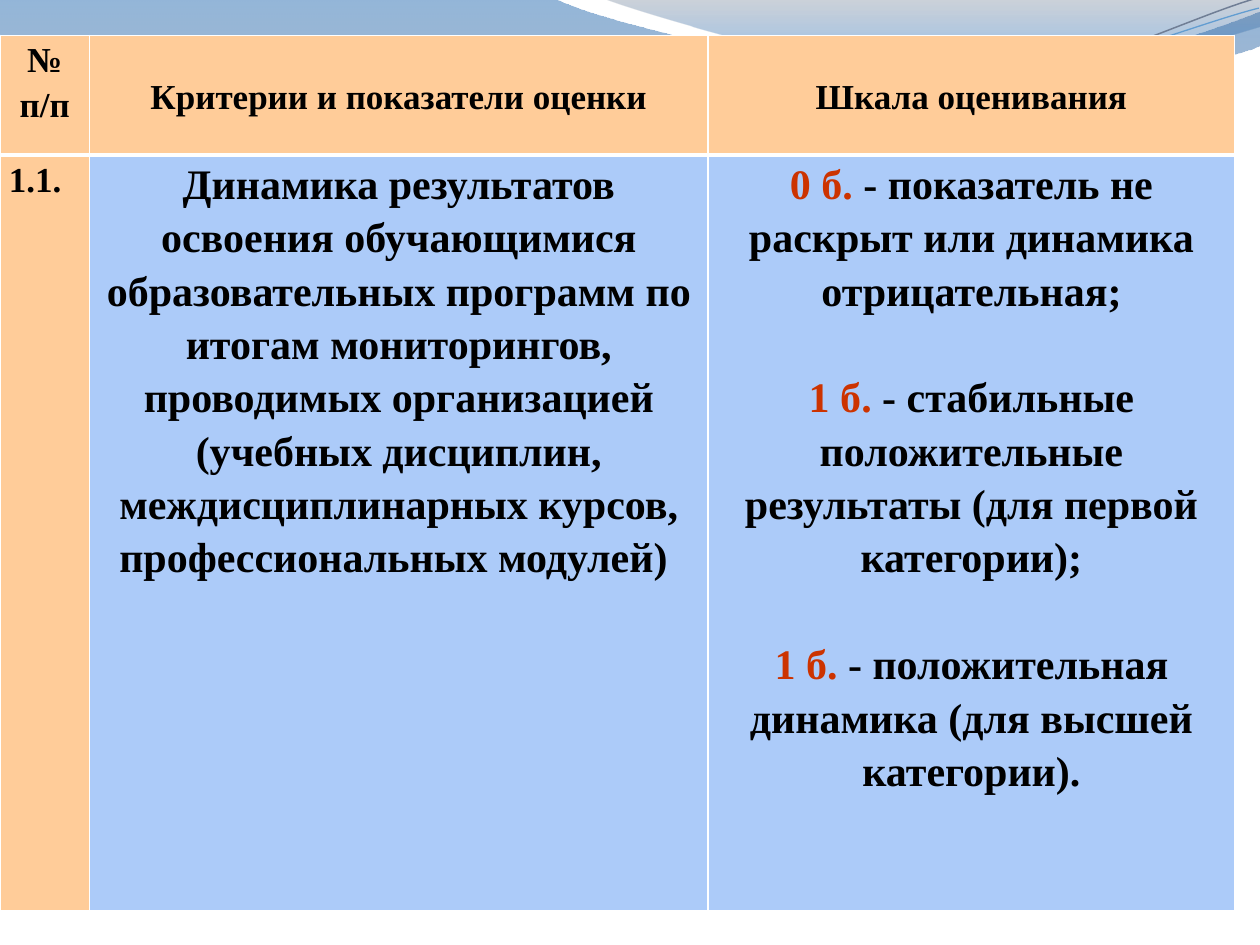
from lxml import etree
from pptx import Presentation
from pptx import util as u
from pptx.dml.color import RGBColor
from pptx.enum import text
from pptx.oxml.ns import qn

BLACK = RGBColor(0x00, 0x00, 0x00)
RED = RGBColor(0xCC, 0x33, 0x00)
WHITE = RGBColor(0xFF, 0xFF, 0xFF)
PEACH = RGBColor(0xFF, 0xCC, 0x99)
SKY = RGBColor(0xAC, 0xCB, 0xF9)
BLUE = RGBColor(0x12, 0x5E, 0xAA)
STEEL = RGBColor(0x69, 0x7F, 0xA4)
SLATE = RGBColor(0x59, 0x69, 0x82)
AZURE = RGBColor(0x06, 0x70, 0xDA)
GREY = RGBColor(0x70, 0x7E, 0x95)
PALE = RGBColor(0x62, 0x9D, 0xD1)

CENTER = text.PP_ALIGN.CENTER
LEFT = text.PP_ALIGN.LEFT

deck = Presentation()
deck.slide_width, deck.slide_height = u.Inches(10), u.Inches(7.5)
slide = deck.slides.add_slide(deck.slide_layouts[6])
slide.background.fill.solid()
slide.background.fill.fore_color.rgb = WHITE


def trace(start, parts, close):
    dots = [start] + [part[i:i + 2] for part in parts for i in range(0, len(part), 2)]
    dots = [(u.Inches(x), u.Inches(y)) for x, y in dots]
    pen = slide.shapes.build_freeform(*dots[0])
    pen.add_line_segments(dots[1:], close=close)
    shape = pen.convert_to_shape()
    shape.shadow.inherit = False
    lines = iter(shape._element.findall(".//" + qn("a:lnTo")))
    for part in parts:
        line = next(lines)
        if len(part) == 6:
            line.tag_name = None
            curve = etree.Element(qn("a:cubicBezTo"))
            line.addprevious(curve)
            for knot in (line, next(lines), next(lines)):
                curve.append(knot[0])
                knot.getparent().remove(knot)
    return shape


def write(para, words, size=20, color=BLACK, align=CENTER, before=0):
    para.alignment = align
    para.line_spacing = 1.15
    para.space_before = u.Pt(before)
    run = para.add_run()
    run.text = words
    font = run.font
    font.name, font.size, font.bold = "Times New Roman", u.Pt(size), True
    font.color.rgb = color


waves = [
    ((0, -0.01), [(4.4, -0.01), (4.76, 0.17, 6.64, 0.63, 7.58, 0.63),
                  (8.53, 0.63, 9.58, 0.26, 10, 0.09), (10.01, 0.36),
                  (9.83, 0.44, 8.7, 0.76, 7.46, 0.75),
                  (6.22, 0.75, 3.82, 0.28, 2.57, 0.34),
                  (1.29, 0.35, 0.46, 0.83, -0.01, 1.13)],
     [(0, BLUE, 45), (1, STEEL, 55)]),
    ((4.79, -0.01), [(5.09, 0.11, 6.82, 0.62, 7.69, 0.65),
                     (8.56, 0.69, 9.61, 0.32, 10, 0.21), (10, 0)],
     [(0, SLATE, 30), (0.8, AZURE, 45)]),
]
for start, parts, stops in waves:
    wave = trace(start, parts, True)
    wave.line.fill.background()
    wave.fill.gradient()
    wave.fill.gradient_angle = 270
    for stop, (place, color, alpha) in zip(wave.fill.gradient_stops, stops):
        stop.position = place
        stop.color.rgb = color
    tints = wave._element.spPr.findall(".//" + qn("a:srgbClr"))
    for tint, (place, color, alpha) in zip(tints, stops):
        etree.SubElement(tint, qn("a:alpha"), val=str(alpha * 1000))

arcs = [
    ((-0.02, 0.87), [(0.47, 0.72, 1.58, 0.41, 2.77, 0.42),
                     (3.96, 0.42, 5.91, 0.93, 7.12, 0.9),
                     (8.32, 0.87, 9.4, 0.36, 10, 0.22)], GREY, 0.85),
    ((-0.02, 0.8), [(0.46, 0.75, 1.64, 0.45, 2.83, 0.46),
                    (4.03, 0.46, 5.96, 0.88, 7.16, 0.85),
                    (8.35, 0.83, 9.42, 0.42, 10.01, 0.3)], PALE, 0.75),
]
pair = []
for start, parts, color, width in arcs:
    arc = trace(start, parts, False)
    arc.rotation = 357.3
    arc.fill.background()
    arc.line.color.rgb = color
    arc.line.width = u.Pt(width)
    pair.append(arc)
slide.shapes.add_group_shape(pair)

frame = slide.shapes.add_table(2, 3, u.Inches(0), u.Inches(0.28), u.Inches(9.8), u.Inches(6.95))
table = frame.table
for col, width in zip(table.columns, (0.71, 4.91, 4.18)):
    col.width = u.Inches(width)
for row, height in zip(table.rows, (0.95, 6)):
    row.height = u.Inches(height)

for r in range(2):
    for c in range(3):
        cell = table.cell(r, c)
        cell.margin_left = cell.margin_right = u.Inches(0.07)
        cell.margin_top = cell.margin_bottom = 0
        if r == 0 and c > 0:
            cell.vertical_anchor = text.MSO_ANCHOR.MIDDLE
        props = cell._tc.get_or_add_tcPr()
        for side, width in zip("LRTB", (1, 1, 3 if r else 1, 1 if r else 3)):
            edge = etree.SubElement(props, qn("a:ln" + side), w=str(u.Pt(width)))
            paint = etree.SubElement(edge, qn("a:solidFill"))
            etree.SubElement(paint, qn("a:srgbClr"), val=str(WHITE))
        cell.fill.solid()
        cell.fill.fore_color.rgb = SKY if r and c else PEACH

number = table.cell(0, 0).text_frame
write(number.paragraphs[0], "№")
write(number.add_paragraph(), "п/п")
write(table.cell(0, 1).text_frame.paragraphs[0], "Критерии и показатели оценки")
write(table.cell(0, 2).text_frame.paragraphs[0], "Шкала оценивания")
write(table.cell(1, 0).text_frame.paragraphs[0], "1.1.", align=LEFT)
write(table.cell(1, 1).text_frame.paragraphs[0],
      "Динамика результатов освоения обучающимися образовательных программ "
      "по итогам мониторингов, проводимых организацией (учебных дисциплин, "
      "междисциплинарных курсов, профессиональных модулей) ", size=24)

scale = table.cell(1, 2).text_frame
marks = [
    ("0 б.", " - показатель не раскрыт или динамика отрицательная;"),
    ("1 б.", " - стабильные положительные результаты (для первой категории);"),
    ("1 б.", " - положительная динамика (для высшей категории)."),
]
for i, (score, note) in enumerate(marks):
    para = scale.add_paragraph() if i else scale.paragraphs[0]
    gap = 30.5 if i else 0
    write(para, score, size=24, color=RED, before=gap)
    write(para, note, size=24, before=gap)

deck.save("out.pptx")
